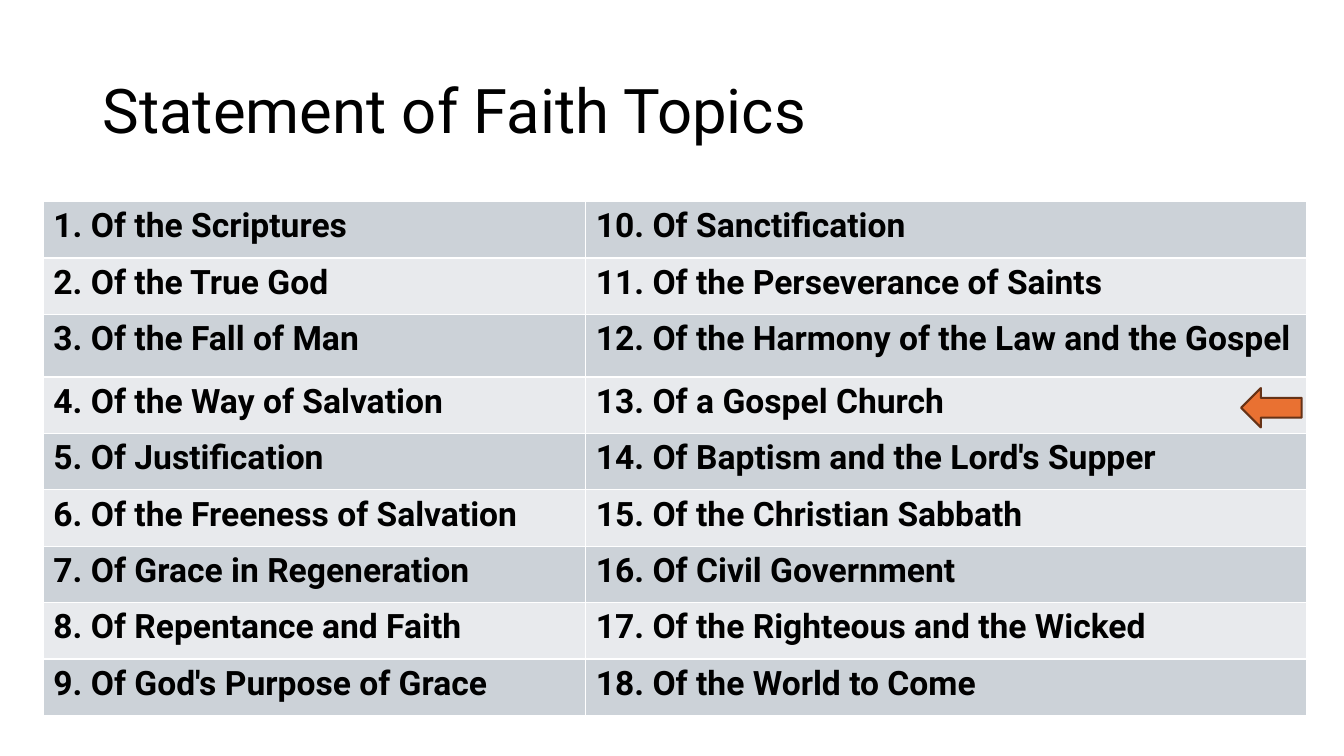
from lxml.etree import SubElement
from pptx import Presentation
from pptx.dml.color import RGBColor
from pptx.enum.shapes import MSO_SHAPE
from pptx.enum.text import MSO_ANCHOR, PP_ALIGN
from pptx.oxml.ns import qn
from pptx.util import Inches, Pt

BLACK = RGBColor(0x00, 0x00, 0x00)
WHITE = RGBColor(0xFF, 0xFF, 0xFF)
BANDS = [RGBColor(0xCC, 0xD2, 0xD8), RGBColor(0xE8, 0xEA, 0xED)]
ORANGE = RGBColor(0xE9, 0x71, 0x32)
BROWN = RGBColor(0x66, 0x32, 0x16)

TITLE_FONT = {"name": "Roboto", "size": Pt(44), "bold": False}
CELL_FONT = {"name": "Roboto", "size": Pt(24), "bold": True}

TOPICS = [
    "Of the Scriptures", "Of the True God", "Of the Fall of Man",
    "Of the Way of Salvation", "Of Justification",
    "Of the Freeness of Salvation", "Of Grace in Regeneration",
    "Of Repentance and Faith", "Of God's Purpose of Grace",
    "Of Sanctification", "Of the Perseverance of Saints",
    "Of the Harmony of the Law and the Gospel", "Of a Gospel Church",
    "Of Baptism and the Lord's Supper", "Of the Christian Sabbath",
    "Of Civil Government", "Of the Righteous and the Wicked",
    "Of the World to Come",
]
COL_WIDTHS = [5.38, 7.15]
ROW_HEIGHTS = [0.56, 0.56, 0.62] + [0.56] * 6
CURRENT_ROW = 3


def write(p, text, font):
    r = p.add_run()
    r.text = text
    for name, value in font.items():
        setattr(r.font, name, value)
    r.font.color.rgb = BLACK


def add_title(slide, left, top, width, height):
    sp = slide.shapes.title
    box = {"left": left, "top": top, "width": width, "height": height}
    for name, value in box.items():
        setattr(sp, name, Inches(value))
    tf = sp.text_frame
    tf.word_wrap = True
    tf.vertical_anchor = MSO_ANCHOR.MIDDLE
    p = tf.paragraphs[0]
    p.alignment = PP_ALIGN.LEFT
    p.line_spacing = 0.9
    write(p, "Statement of Faith Topics", TITLE_FONT)


def set_borders(cell):
    tc_pr = cell._tc.get_or_add_tcPr()
    for i, side in enumerate(("lnL", "lnR", "lnT", "lnB")):
        ln = tc_pr.makeelement(qn(f"a:{side}"), {"w": str(Pt(1))})
        fill = SubElement(ln, qn("a:solidFill"))
        SubElement(fill, qn("a:srgbClr"), val=str(WHITE))
        tc_pr.insert(i, ln)  # borders come before the fill


def add_topics(slide, left, top, width, height):
    rows = len(ROW_HEIGHTS)
    table = slide.shapes.add_table(
        rows, len(COL_WIDTHS), Inches(left), Inches(top),
        Inches(width), Inches(height)).table
    table.first_row = False
    for col, w in zip(table.columns, COL_WIDTHS):
        col.width = Inches(w)
    for row, h in zip(table.rows, ROW_HEIGHTS):
        row.height = Inches(h)

    # Topics run down the first column, then the second
    for i, topic in enumerate(TOPICS):
        col, row = divmod(i, rows)
        cell = table.cell(row, col)
        cell.fill.solid()
        cell.fill.fore_color.rgb = BANDS[row % 2]
        set_borders(cell)
        write(cell.text_frame.paragraphs[0], f"{i + 1}. {topic}", CELL_FONT)

    # Arrow marking the current topic, at the right end of its row
    row_top = top + sum(ROW_HEIGHTS[:CURRENT_ROW])
    sp = slide.shapes.add_shape(
        MSO_SHAPE.RIGHT_ARROW, Inches(left + width - 0.65),
        Inches(row_top + 0.11), Inches(0.6), Inches(0.39))
    sp.rotation = 180
    sp.shadow.inherit = False
    sp.fill.solid()
    sp.fill.fore_color.rgb = ORANGE
    sp.line.color.rgb = BROWN
    sp.line.width = Pt(1.5)


def main():
    prs = Presentation()
    prs.slide_width, prs.slide_height = Inches(13.33), Inches(7.5)
    slide = prs.slides.add_slide(prs.slide_layouts[5])
    slide.background.fill.solid()
    slide.background.fill.fore_color.rgb = WHITE
    add_title(slide, 0.92, 0.4, 11.5, 1.45)
    add_topics(slide, 0.43, 2, sum(COL_WIDTHS), sum(ROW_HEIGHTS))
    prs.save("out.pptx")


if __name__ == "__main__":
    main()
